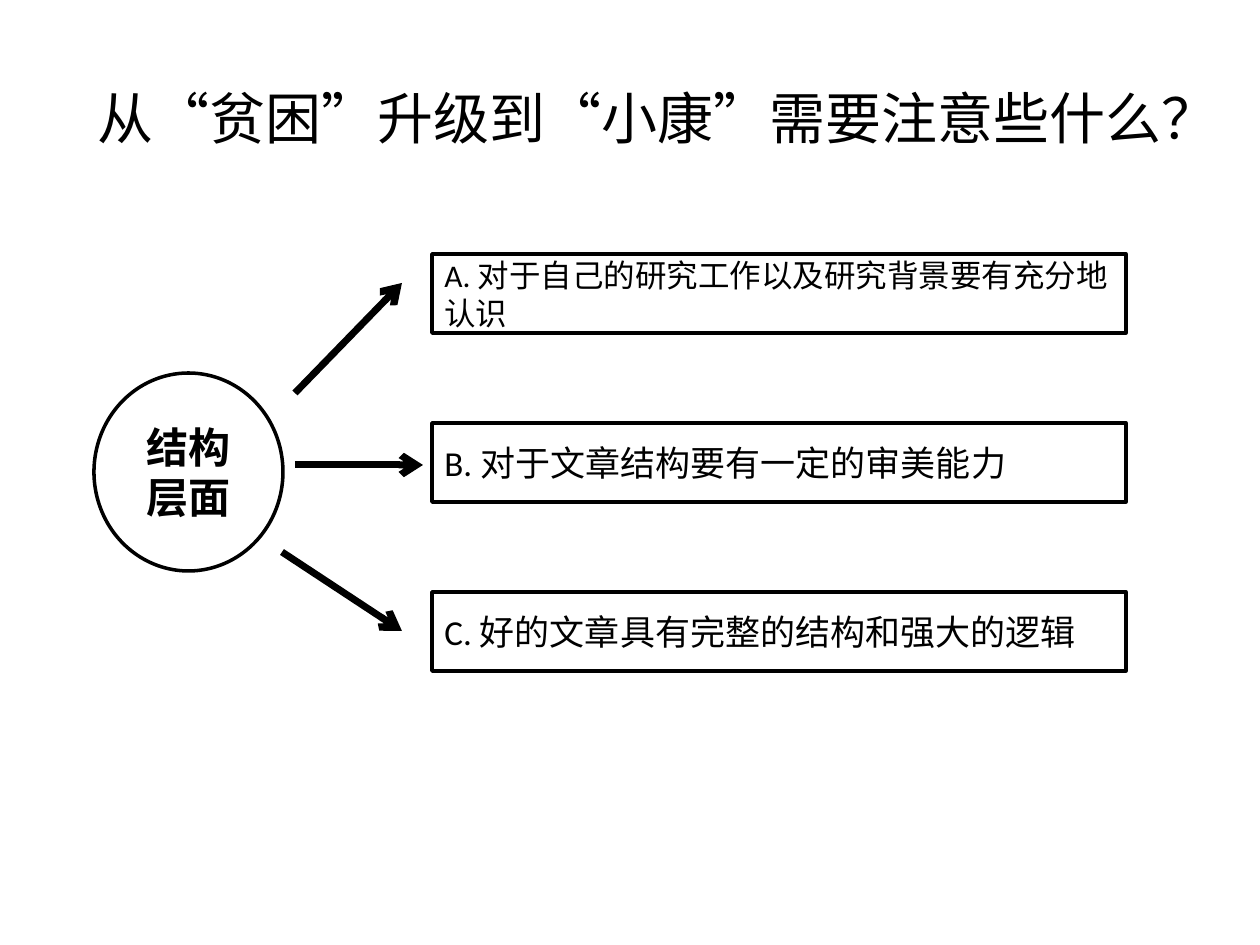
from lxml import etree
from pptx import Presentation
from pptx.enum import shapes, text
from pptx.dml.color import RGBColor
from pptx.oxml import ns
from pptx import util as u

PX = u.Inches(10) / 1260
COLORS = {"ink": "000000", "paper": "FFFFFF"}
FONT = "Calibri"

TITLE = "从“贫困”升级到“小康”需要注意些什么？"
TOPIC = "结构层面"
POINTS = [
    ("A. 对于自己的研究工作以及研究背景要有充分地认识", 18),
    ("B. 对于文章结构要有一定的审美能力", 20),
    ("C. 好的文章具有完整的结构和强大的逻辑", 20),
]
# Start and end of each arrow, relative to the diagram
ARROWS = [
    ((201, 139), (308, 29)),
    ((201, 211), (329, 211)),
    ((188, 298), (308, 377)),
]


def px(*lengths):
    return [u.Emu(round(length * PX)) for length in lengths]


def color(name):
    return RGBColor.from_string(COLORS[name])


def write(shape, words, size, align, bold=False):
    frame = shape.text_frame
    frame.word_wrap = True
    frame.vertical_anchor = text.MSO_ANCHOR.MIDDLE
    paragraph = frame.paragraphs[0]
    paragraph.text = words
    paragraph.alignment = align
    font = paragraph.font
    font.name, font.size, font.bold = FONT, u.Pt(size), bold
    font.color.rgb = color("ink")


def add_outlined(slide, kind, left, top, width, height):
    shape = slide.shapes.add_shape(kind, *px(left, top, width, height))
    shape.shadow.inherit = False
    shape.line.color.rgb = color("ink")
    shape.line.width = u.Pt(2)
    return shape


def add_arrow(slide, start, end):
    arrow = slide.shapes.add_connector(
        shapes.MSO_CONNECTOR.STRAIGHT, *px(*start, *end))
    arrow.line.color.rgb = color("ink")
    arrow.line.width = u.Pt(4)
    line = arrow.line._get_or_add_ln()
    etree.SubElement(line, ns.qn("a:tailEnd"), type="arrow")
    etree.SubElement(arrow._element.spPr, ns.qn("a:effectLst"))


def place_title(slide, left, top, width, height):
    title = slide.shapes.title
    title.left, title.top, title.width, title.height = px(
        left, top, width, height)
    write(title, TITLE, 32, text.PP_ALIGN.CENTER)


def place_diagram(slide, left, top, width, height):
    # Points, evenly spaced from the top to the bottom of the diagram
    box_left, box_height = 338, 79
    pitch = (height - box_height) / (len(POINTS) - 1)
    for row, (words, size) in enumerate(POINTS):
        box = add_outlined(slide, shapes.MSO_SHAPE.RECTANGLE,
                           left + box_left, top + row * pitch,
                           width - box_left, box_height)
        box.fill.background()
        write(box, words, size, text.PP_ALIGN.LEFT)

    # Topic
    circle = add_outlined(slide, shapes.MSO_SHAPE.OVAL,
                          left, top + 119, 189, 198)
    circle.fill.solid()
    circle.fill.fore_color.rgb = color("paper")
    write(circle, TOPIC, 24, text.PP_ALIGN.CENTER, bold=True)

    # Arrows from the topic to the points
    for ends in ARROWS:
        add_arrow(slide, *[(left + x, top + y) for x, y in ends])


def main():
    presentation = Presentation()
    presentation.slide_width, presentation.slide_height = px(1260, 945)
    slide = presentation.slides.add_slide(presentation.slide_layouts[5])
    slide.background.fill.solid()
    slide.background.fill.fore_color.rgb = color("paper")
    place_title(slide, 63, 38, 1134, 158)
    place_diagram(slide, 94, 254, 1032, 417)
    presentation.save("out.pptx")


if __name__ == "__main__":
    main()
